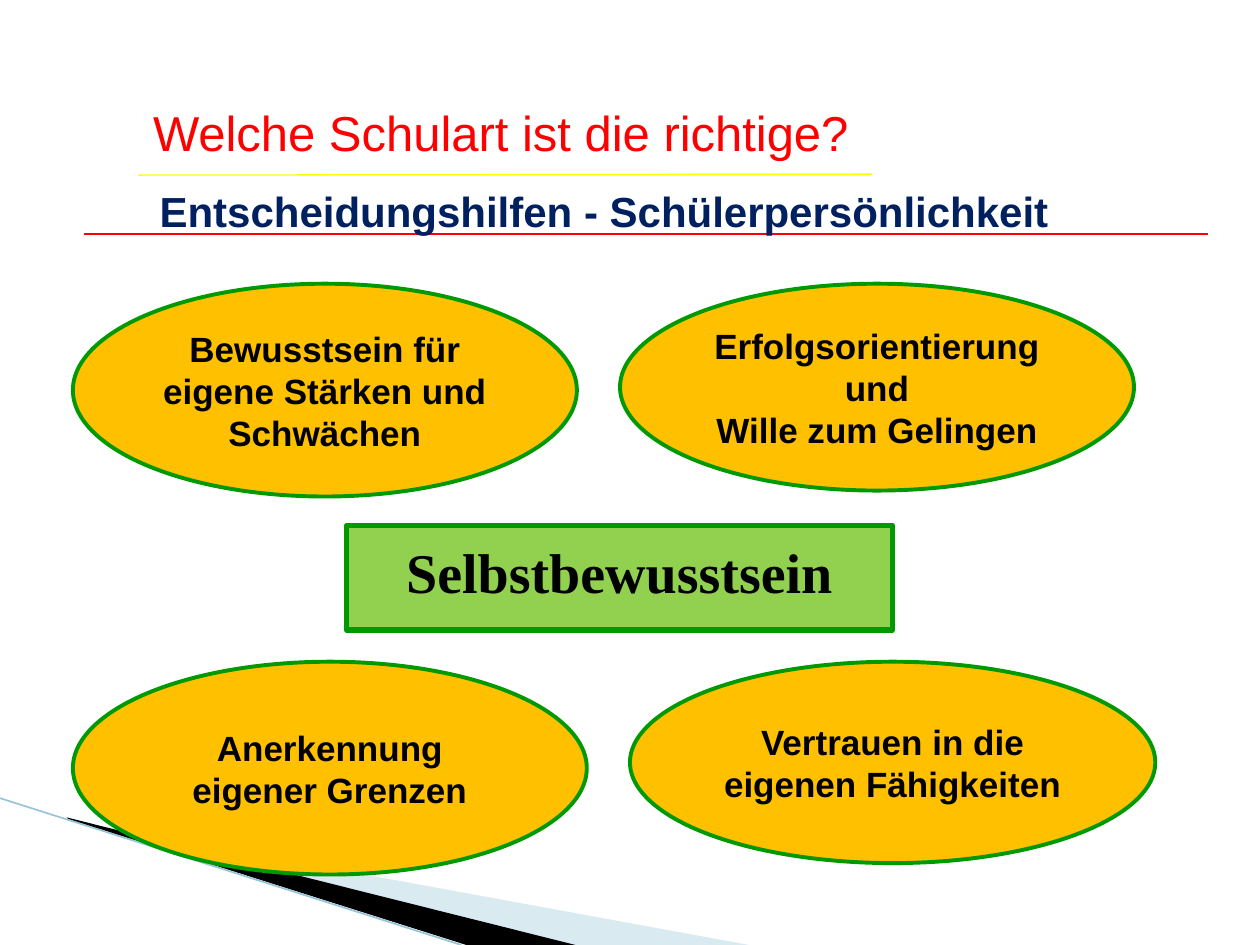
import pptx
import pptx.dml.color
import pptx.enum.shapes
import pptx.enum.text
import pptx.oxml
import pptx.oxml.ns
import pptx.util
from lxml import etree

Cm = pptx.util.Cm
Pt = pptx.util.Pt
RGBColor = pptx.dml.color.RGBColor
MSO_SHAPE = pptx.enum.shapes.MSO_SHAPE
ANCHOR = pptx.enum.text.MSO_ANCHOR
qn = pptx.oxml.ns.qn

BLACK = RGBColor(0x00, 0x00, 0x00)
RED = RGBColor(0xFF, 0x00, 0x00)
YELLOW = RGBColor(0xFF, 0xFF, 0x00)
NAVY = RGBColor(0x00, 0x20, 0x60)
GOLD = RGBColor(0xFF, 0xC0, 0x00)
LIME = RGBColor(0x92, 0xD0, 0x50)
GREEN = RGBColor(0x00, 0x99, 0x00)
PALE_BLUE = RGBColor(0xA0, 0xCB, 0xDC)
SOFT_BLUE = RGBColor(0x97, 0xC5, 0xD8)


def write_text(tf, text, size, color=BLACK, bold=True, font="Arial",
               anchor=ANCHOR.TOP, top=0.13):
    """Fill a text frame with one centred paragraph; \\n is a line break."""
    tf.word_wrap = True
    tf.vertical_anchor = anchor
    tf.margin_top = Cm(top)
    p = tf.paragraphs[0]
    p.alignment = pptx.enum.text.PP_ALIGN.CENTER
    for i, line in enumerate(text.split("\n")):
        if i:
            p.add_line_break()
        r = p.add_run()
        r.text = line
        r.font.name = font
        r.font.size = Pt(size)
        r.font.bold = bold
        r.font.color.rgb = color


class SlideBuilder:
    def __init__(self, s, border=GREEN):
        self.s = s
        self.border = border

    def wedge(self, points, color, opacity=100):
        pts = [(Cm(x), Cm(y)) for x, y in points]
        fb = self.s.shapes.build_freeform(*pts[0], scale=1.0)
        fb.add_line_segments(pts[1:], close=True)
        sp = fb.convert_to_shape()
        sp.shadow.inherit = False
        sp.fill.solid()
        sp.fill.fore_color.rgb = color
        sp.line.fill.background()
        if opacity < 100:
            clr = sp.fill._xPr.find(".//" + qn("a:srgbClr"))
            etree.SubElement(clr, qn("a:alpha"), val=str(opacity * 1000))

    def rule(self, x1, y1, x2, y2, color, width=0.75):
        c = self.s.shapes.add_connector(
            pptx.enum.shapes.MSO_CONNECTOR.STRAIGHT,
            Cm(x1), Cm(y1), Cm(x2), Cm(y2))
        c.line.color.rgb = color
        c.line.width = Pt(width)
        etree.SubElement(c._element.spPr, qn("a:effectLst"))

    def label(self, x, y, w, h, text, **fmt):
        sp = self.s.shapes.add_textbox(Cm(x), Cm(y), Cm(w), Cm(h))
        write_text(sp.text_frame, text, **fmt)

    def box(self, kind, x, y, w, h, text, fill, border_width, **fmt):
        sp = self.s.shapes.add_shape(kind, Cm(x), Cm(y), Cm(w), Cm(h))
        sp.shadow.inherit = False
        sp.fill.solid()
        sp.fill.fore_color.rgb = fill
        sp.line.color.rgb = self.border
        sp.line.width = Pt(border_width)
        write_text(sp.text_frame, text, **fmt)

    def trait(self, x, y, w, h, text):
        self.box(MSO_SHAPE.OVAL, x, y, w, h, text, GOLD, 2.25,
                 size=20, anchor=ANCHOR.MIDDLE)


def main():
    prs = pptx.Presentation()
    prs.slide_width, prs.slide_height = Cm(25.4), Cm(19.05)
    b = SlideBuilder(prs.slides.add_slide(prs.slide_layouts[6]))

    b.wedge([(1.4, 16.54), (15.1, 19.05), (11.58, 19.05), (1.4, 16.51)],
            PALE_BLUE, opacity=40)
    b.wedge([(1.35, 16.48), (11.6, 19.05), (9.4, 19.05), (1.37, 16.51)], BLACK)
    b.rule(0, 16.09, 9.3, 19.05, SOFT_BLUE, 0.95)

    b.label(1.7, 1.93, 16.79, 1.45, "Welche Schulart ist die richtige?",
            size=28, color=RED, bold=False)
    b.rule(2.79, 3.53, 17.58, 3.51, YELLOW)
    b.rule(1.7, 4.72, 24.36, 4.72, RED)
    b.label(2.77, 3.61, 18.82, 1.3,
            "Entscheidungshilfen - Schülerpersönlichkeit", size=24, color=NAVY)

    left, upper, lower = 1.47, 5.72, 13.34
    b.trait(left, upper, 10.16, 4.29,
            "Bewusstsein für eigene Stärken und Schwächen")
    b.trait(left, lower, 10.36, 4.29, "Anerkennung eigener Grenzen")
    b.trait(12.5, upper, 10.36, 4.17,
            "Erfolgsorientierung\nund\nWille zum Gelingen")
    b.trait(12.7, lower, 10.59, 4.06, "Vertrauen in die eigenen Fähigkeiten")
    b.box(MSO_SHAPE.RECTANGLE, 6.99, 10.59, 11, 2.11, "Selbstbewusstsein",
          LIME, 3, size=32, font="Times New Roman", top=0.25)

    prs.save("out.pptx")


if __name__ == "__main__":
    main()
